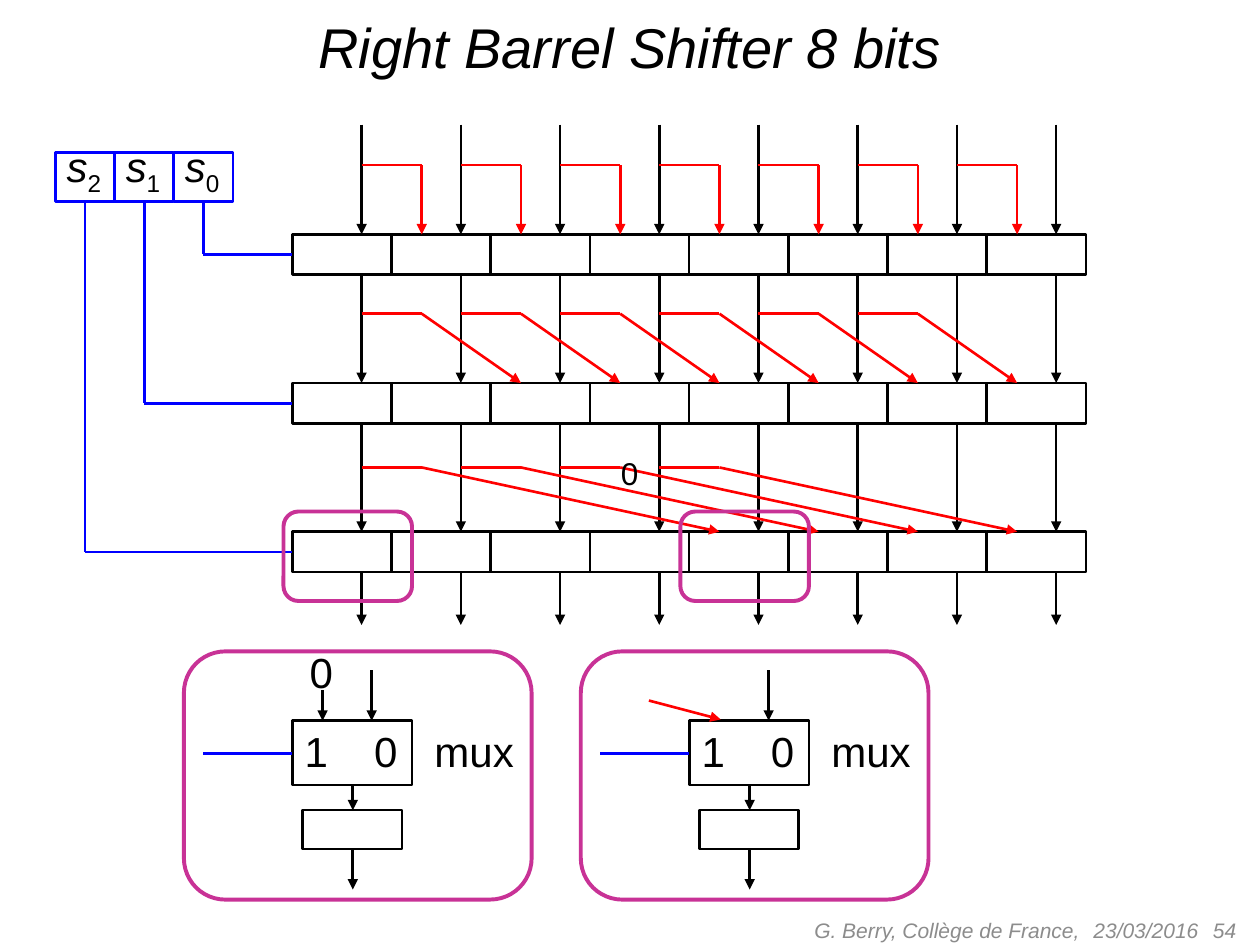
from lxml import etree
from pptx import Presentation
from pptx.dml.color import RGBColor
from pptx.enum.shapes import MSO_CONNECTOR, MSO_SHAPE
from pptx.enum.text import MSO_ANCHOR, PP_ALIGN
from pptx.oxml.ns import qn
from pptx.util import Pt

PX = 9144  # EMU per px, 100 px to the inch
BLACK = RGBColor(0x00, 0x00, 0x00)
GREY = RGBColor(0x8C, 0x8C, 0x8C)
RED = RGBColor(0xFF, 0x00, 0x00)
BLUE = RGBColor(0x00, 0x00, 0xFF)
MAGENTA = RGBColor(0xC8, 0x32, 0x96)

STRAIGHT = MSO_CONNECTOR.STRAIGHT
RECT, ROUNDED = MSO_SHAPE.RECTANGLE, MSO_SHAPE.ROUNDED_RECTANGLE
TOP, MIDDLE = MSO_ANCHOR.TOP, MSO_ANCHOR.MIDDLE
LEFT, CENTER, RIGHT = PP_ALIGN.LEFT, PP_ALIGN.CENTER, PP_ALIGN.RIGHT

BITS = 8
ROW_LEFT, ROW_WIDTH, ROW_HEIGHT = 232, 630, 32
CELL = ROW_WIDTH / BITS
SHIFTED_IN, DIRECT_IN = 24, 55  # offsets of the two inputs inside a cell
STAGES = [  # row top, top of its inputs, height of the red branch, shift
    (186, 99, 131, 1),
    (304, 218, 249, 2),
    (422, 336, 371, 4),
]


def emu(*lengths):
    return [round(length * PX) for length in lengths]


def add_line(slide, x1, y1, x2, y2, color, arrow=False):
    line = slide.shapes.add_connector(STRAIGHT, *emu(x1, y1, x2, y2))
    line.line.color.rgb = color
    line.line.width = Pt(1.5)
    properties = line._element.spPr
    if arrow:
        etree.SubElement(line.line._get_or_add_ln(), qn("a:tailEnd"), type="triangle")
    etree.SubElement(properties, qn("a:effectLst"))


def add_outline(slide, x, y, w, h, color=BLACK, kind=RECT, weight=1.5):
    outline = slide.shapes.add_shape(kind, *emu(x, y, w, h))
    outline.shadow.inherit = False
    outline.fill.background()
    outline.line.color.rgb = color
    outline.line.width = Pt(weight)


def add_label(slide, x, y, w, h, text, size, color=BLACK, italic=False,
              align=LEFT, anchor=TOP, insets=(5, 5), tab=None):
    """Place one line of text and return its paragraph."""
    frame = slide.shapes.add_textbox(*emu(x, y, w, h)).text_frame
    frame.word_wrap = True
    frame.vertical_anchor = anchor
    frame.margin_left, frame.margin_right = emu(10, 10)
    frame.margin_top, frame.margin_bottom = emu(*insets)
    label = frame.paragraphs[0]
    label.text = text
    label.alignment = align
    if tab:
        stops = etree.SubElement(label._p.get_or_add_pPr(), qn("a:tabLst"))
        etree.SubElement(stops, qn("a:tab"), pos=str(tab * PX), algn="l")
    label.font.name = "Arial"
    label.font.size = Pt(size)
    label.font.italic = italic
    label.font.color.rgb = color
    return label


def add_symbol(slide, x, y, w, text, **options):
    symbol = add_label(slide, x, y, w, 51, text, 24, insets=(2, 7), **options)
    symbol.line_spacing = 1.05
    return symbol


def add_footer(slide, y):
    for x, w, text, align in [(550, 317, "G. Berry, Collège de France,", RIGHT),
                              (858, 105, "23/03/2016", LEFT),
                              (941, 50, "54", RIGHT)]:
        add_label(slide, x, y, w, 32, text, 12, GREY, True, align, MIDDLE)


def add_stage(slide, top, inputs_top, branch_y, shift):
    """Draw a row of cells with its direct and shifted inputs."""
    lefts = [ROW_LEFT + bit * CELL for bit in range(BITS)]
    for left in lefts:
        add_outline(slide, left, top, CELL, ROW_HEIGHT)
        add_line(slide, left + DIRECT_IN, inputs_top, left + DIRECT_IN, top, BLACK, True)
    for left, target in zip(lefts, lefts[shift:]):
        knee = left + CELL + SHIFTED_IN
        add_line(slide, left + DIRECT_IN, branch_y, knee, branch_y, RED)
        add_line(slide, knee, branch_y, target + SHIFTED_IN, top, RED, True)


def add_outputs(slide, top, bottom):
    for bit in range(BITS):
        x = ROW_LEFT + bit * CELL + DIRECT_IN
        add_line(slide, x, top, x, bottom, BLACK, True)


def add_selector(slide, x, y):
    """Draw the shift amount s2 s1 s0 and wire each bit to its stage."""
    w, h = 47, 39
    for bit, (row_top, *_) in enumerate(STAGES):
        left = x + (len(STAGES) - 1 - bit) * w
        add_outline(slide, left, y, w, h, BLUE)
        symbol = add_symbol(slide, left - 1, y - 14, 56, "s")
        symbol.runs[0].font.italic = True
        index = symbol.add_run()
        index.text = str(bit)
        index.font._element.set("baseline", "-25000")
        wire_x, wire_y = left + w / 2, row_top + ROW_HEIGHT / 2
        add_line(slide, wire_x, y + h, wire_x, wire_y, BLUE)
        add_line(slide, wire_x, wire_y, ROW_LEFT, wire_y, BLUE)


def add_mux_detail(slide, x, y, bit, zero_input):
    """Mark a cell of the last stage and show its multiplexer enlarged."""
    add_outline(slide, ROW_LEFT + bit * CELL - 7, STAGES[-1][0] - 16, 102, 71,
                MAGENTA, ROUNDED, 2.25)
    add_outline(slide, x, y, 276, 197, MAGENTA, ROUNDED, 2.25)
    add_outline(slide, x + 86, y + 55, 95, 51)
    add_symbol(slide, x + 86, y + 55, 95, "1\t0", tab=55)
    add_symbol(slide, x + 189, y + 55, 86, "mux")
    add_outline(slide, x + 94, y + 126, 79, 31)
    add_line(slide, x + 86, y + 81, x + 15, y + 81, BLUE)
    for arrow_x, start, end in [(149, 15, 55), (134, 106, 126), (134, 157, 189)]:
        add_line(slide, x + arrow_x, y + start, x + arrow_x, y + end, BLACK, True)
    if zero_input:
        add_symbol(slide, x + 90, y - 8, 39, "0")
        add_line(slide, x + 110, y + 31, x + 110, y + 55, BLACK, True)
    else:
        add_line(slide, x + 54, y + 39, x + 111, y + 54, RED, True)


def main():
    deck = Presentation()
    deck.slide_width, deck.slide_height = emu(1000, 750)
    slide = deck.slides.add_slide(deck.slide_layouts[6])
    add_label(slide, 25, 5, 950, 64, "Right Barrel Shifter 8 bits", 32,
              italic=True, align=CENTER)
    add_footer(slide, 722)
    for stage in STAGES:
        add_stage(slide, *stage)
    add_outputs(slide, 454, 496)
    add_selector(slide, 44, 121)
    add_mux_detail(slide, 461, 517, bit=4, zero_input=False)
    add_mux_detail(slide, 146, 517, bit=0, zero_input=True)
    zero = add_label(slide, 483, 354, 35, 42, "0", 18)
    zero.line_spacing = 1.05
    deck.save("out.pptx")


if __name__ == "__main__":
    main()
